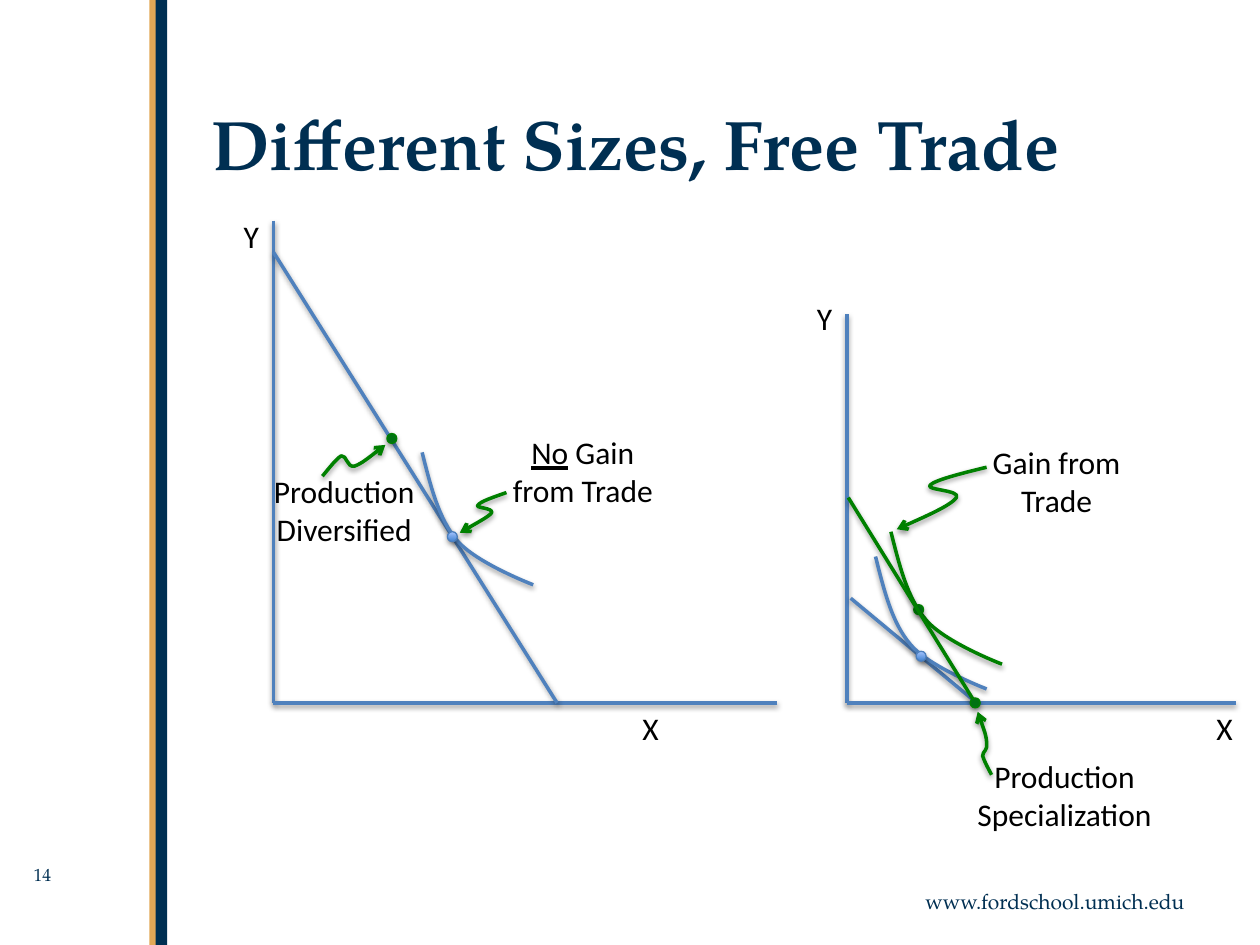
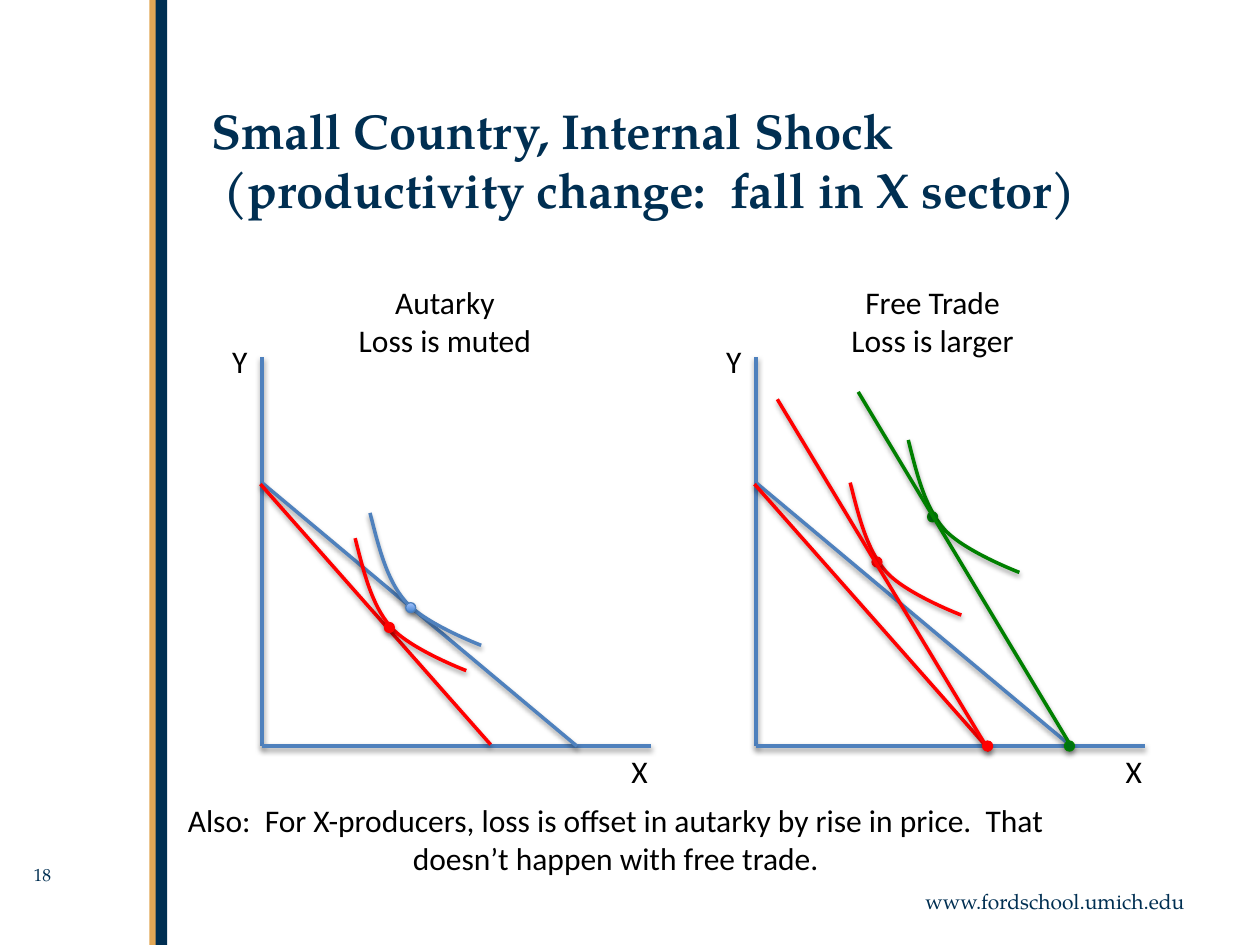
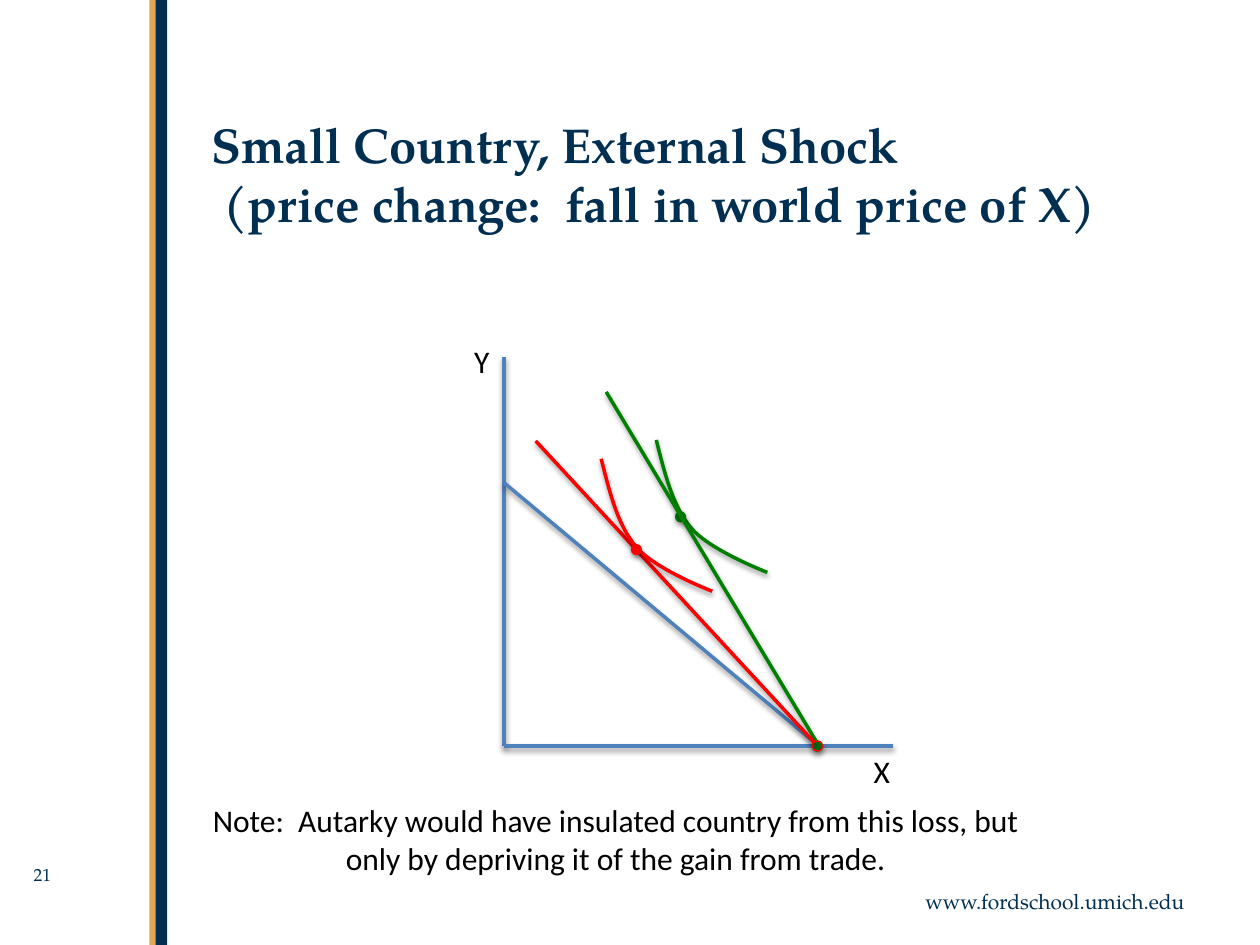
import pptx
import pptx.dml.color
import pptx.enum.shapes
import pptx.enum.text
import pptx.oxml
import pptx.oxml.ns
import pptx.util
from lxml import etree

Cm, Pt = pptx.util.Cm, pptx.util.Pt
RGBColor = pptx.dml.color.RGBColor
ALIGN = pptx.enum.text.PP_ALIGN
SHAPE = pptx.enum.shapes.MSO_SHAPE
qn = pptx.oxml.ns.qn

NAVY = RGBColor(0x00, 0x2F, 0x52)
GOLD = RGBColor(0xE3, 0xA8, 0x56)
BLACK = RGBColor(0x00, 0x00, 0x00)
BLUE = RGBColor(0x4F, 0x81, 0xBD)
GREEN = RGBColor(0x00, 0x80, 0x00)
RED = RGBColor(0xFF, 0x00, 0x00)
DOT_EDGE_BLUE = RGBColor(0x4B, 0x7E, 0xBC)
DOT_DARK_BLUE = RGBColor(0x3F, 0x80, 0xCE)
DOT_LIGHT_BLUE = RGBColor(0xA4, 0xC4, 0xFF)
DOT_GREEN = RGBColor(0x00, 0x72, 0x12)

SERIF = {"name": "TeX Gyre Pagella", "color": NAVY}
TITLE = {**SERIF, "size": Pt(40), "bold": True}
LONG_TITLE = {**TITLE, "size": Pt(28)}
FOOTER = {**SERIF, "size": Pt(12)}
NUMBER = {**SERIF, "size": Pt(10)}
LABEL = {"name": "Calibri", "color": BLACK, "size": Pt(18)}
UNDERLINED = {**LABEL, "underline": True}

# Shared geometry, in centimetres
SLIDE_SIZE = (25.4, 19.05)
BANDS = [(3.12, 0.25, NAVY), (3.01, 0.13, GOLD)]  # left, width, colour
TITLE_SIZE = (20.12, 3.12)
FOOTER_BOX = (17.78, 17.78, 6.35, 0.76)
NUMBER_BOX = (0.43, 17.3, 2.34, 0.86)
NOTE_BOX = (3.51, 16.03, 17.81)
AXIS_LETTER = (1.07, 1.02)
LABEL_HEIGHT = 1.8
DOT = 0.2
INDIFFERENCE = [(0, 0), (0.17, 0.67), (0.33, 1.34), (0.71, 1.78),
                (1.09, 2.23), (2.24, 2.67), (2.24, 2.67)]

# Marks are placed as (right, up) from the origin of their graph
FRONTIER = ("line", BLUE, (6.35, 0), (0, 5.31))
SHRUNK_FRONTIER = ("line", RED, (4.61, 0.03), (-0.03, 5.28))
GAIN_FROM_TRADE = [
    ("curve", GREEN, (3.07, 6.17)),
    ("dot", GREEN, (3.56, 4.62)),
    ("line", GREEN, (6.32, 0.05), (2.06, 7.14)),
    ("dot", GREEN, (6.32, 0)),
]
SQUARE = {"size": (7.84, 7.84), "x_back": 0.64, "y_up": 0.42}

SLIDES = [
    {
        "number": "14",
        "title": ["Different Sizes, Free Trade"], "style": TITLE, "title_top": 1.91,
        "graphs": [
            {"origin": (5.51, 14.17), "size": (10.16, 9.72), "x_back": 2.97, "y_up": 0.2,
             "marks": [
                 ("line", BLUE, (5.72, 0), (0, 9.09)),
                 ("curve", BLUE, (3, 5.05)),
                 ("dot", BLUE, (3.61, 3.35)),
                 ("dot", GREEN, (2.39, 5.33))]},
            {**SQUARE, "origin": (17.07, 14.17),
             "marks": [
                 ("line", BLUE, (2.62, 0), (0.08, 2.11)),
                 ("curve", BLUE, (0.58, 2.95)),
                 ("curve", GREEN, (0.89, 3.45)),
                 ("dot", BLUE, (1.5, 0.94)),
                 ("dot", GREEN, (1.45, 1.88)),
                 ("line", GREEN, (2.59, 0), (0.03, 4.14)),
                 ("dot", GREEN, (2.59, 0))]},
        ],
        "labels": [
            ((19.02, 15.14, 4.88), [[("Production Specialization", LABEL)]]),
            ((4.5, 9.4, 4.88), [[("Production Diversified", LABEL)]]),
            ((9.78, 8.61, 3.94), [[("No", UNDERLINED), (" Gain from Trade", LABEL)]]),
            ((19.66, 8.81, 3.28), [[("Gain from Trade", LABEL)]]),
        ],
        "arrows": [
            [(6.5, 9.6), (6.65, 9.42), (6.78, 9.25), (6.88, 9.19), (6.99, 9.17),
             (6.99, 9.42), (7.14, 9.4), (7.29, 9.35), (7.77, 8.97)],
            [(19.99, 15.62), (19.91, 15.47), (19.84, 15.34), (19.81, 15.24), (19.81, 15.14),
             (19.91, 15.14), (19.89, 14.99), (19.89, 14.83), (19.71, 14.35)],
            [(19.89, 9.42), (19.35, 9.55), (18.85, 9.68), (18.75, 9.78), (18.64, 9.88),
             (19.38, 9.88), (19.28, 10.03), (19.18, 10.19), (18.08, 10.67)],
            [(10.21, 9.93), (9.93, 10.03), (9.68, 10.11), (9.63, 10.19), (9.58, 10.24),
             (9.96, 10.24), (9.91, 10.34), (9.86, 10.41), (9.27, 10.74)],
        ],
    },
    {
        "number": "18",
        "title": ["Small Country, Internal Shock", " (productivity change:  fall in X sector)"],
        "style": LONG_TITLE, "title_top": 1.91,
        "graphs": [
            {**SQUARE, "origin": (5.28, 15.04),
             "marks": [
                 FRONTIER,
                 ("curve", BLUE, (2.18, 4.7)),
                 ("dot", BLUE, (3, 2.79)),
                 SHRUNK_FRONTIER,
                 ("curve", RED, (1.88, 4.19)),
                 ("dot", RED, (2.57, 2.39))]},
            {**SQUARE, "origin": (15.24, 15.04),
             "marks": [
                 FRONTIER,
                 *GAIN_FROM_TRADE,
                 SHRUNK_FRONTIER,
                 ("curve", RED, (1.9, 5.31)),
                 ("dot", RED, (2.44, 3.71)),
                 ("line", RED, (4.7, -0.1), (0.43, 6.99)),
                 ("dot", RED, (4.67, 0))]},
        ],
        "labels": [
            ((6.53, 5.59, 4.88), [[("Autarky", LABEL)], [("Loss is muted", LABEL)]]),
            ((16.36, 5.59, 4.88), [[("Free Trade", LABEL)], [("Loss is larger", LABEL)]]),
            (NOTE_BOX, [[("Also:  For X-producers, loss is offset in autarky by rise in price.  "
                          "That doesn’t happen with free trade.", LABEL)]]),
        ],
        "arrows": [],
    },
    {
        "number": "21",
        "title": ["Small Country, External Shock", " (price change:  fall in world price of X)"],
        "style": LONG_TITLE, "title_top": 2.18,
        "graphs": [
            {**SQUARE, "origin": (10.16, 15.04),
             "marks": [
                 FRONTIER,
                 *GAIN_FROM_TRADE,
                 ("line", RED, (6.25, 0.08), (0.64, 6.15)),
                 ("curve", RED, (1.96, 5.79)),
                 ("dot", RED, (2.67, 3.96)),
                 ("ring", RED, (6.32, 0))]},
        ],
        "labels": [
            (NOTE_BOX, [[("Note:  Autarky would have insulated country from this loss, "
                          "but only by depriving it of the gain from trade.", LABEL)]]),
        ],
        "arrows": [],
    },
]


def add_text(page, place, paragraphs, align=ALIGN.LEFT):
    """Each paragraph is a list of (text, format) spans; None is a line break."""
    box = page.shapes.add_textbox(*map(Cm, place))
    box.text_frame.word_wrap = True
    for index, spans in enumerate(paragraphs):
        para = box.text_frame.paragraphs[0] if index == 0 else box.text_frame.add_paragraph()
        para.alignment = align
        for part in spans:
            if part is None:
                para.add_line_break()
                continue
            span = para.add_run()
            span.text = part[0]
            for key, value in part[1].items():
                if key == "color":
                    span.font.color.rgb = value
                else:
                    setattr(span.font, key, value)


def add_shadow(shape, distance=1.6, opacity=38):
    props = shape._element.spPr
    effects = props.find(qn("a:effectLst"))
    if effects is None:
        effects = etree.SubElement(props, qn("a:effectLst"))
    shadow = etree.SubElement(effects, qn("a:outerShdw"), blurRad=str(Pt(3.1)),
                              dist=str(Pt(distance)), dir="5400000", rotWithShape="0")
    black = etree.SubElement(shadow, qn("a:srgbClr"), val="000000")
    etree.SubElement(black, qn("a:alpha"), val=str(opacity * 1000))


def set_line(shape, colour, width=2):
    shape.line.color.rgb = colour
    shape.line.width = Pt(width)


def add_line(page, colour, start, end):
    line = page.shapes.add_connector(pptx.enum.shapes.MSO_CONNECTOR.STRAIGHT,
                                     *map(Cm, (*start, *end)))
    set_line(line, colour)
    add_shadow(line)


def add_bezier(page, colour, points):
    """Draw a start point followed by groups of three cubic control points."""
    start, *rest = [(Cm(x), Cm(y)) for x, y in points]
    builder = page.shapes.build_freeform(*start)
    builder.add_line_segments(rest, close=False)
    curve = builder.convert_to_shape()
    outline = curve._element.spPr.find(".//" + qn("a:path"))
    segments = outline.findall(qn("a:lnTo"))
    for first in range(0, len(segments), 3):
        cubic = etree.SubElement(outline, qn("a:cubicBezTo"))
        for segment in segments[first:first + 3]:
            cubic.append(segment[0])
            outline.remove(segment)
    curve.fill.background()
    set_line(curve, colour)
    curve.shadow.inherit = False
    add_shadow(curve)
    return curve


def add_curve(page, colour, start):
    add_bezier(page, colour, [(start[0] + x, start[1] + y) for x, y in INDIFFERENCE])


def add_arrow(page, points):
    arrow = add_bezier(page, GREEN, points + points[-1:])
    etree.SubElement(arrow.line._get_or_add_ln(), qn("a:tailEnd"), type="arrow")


def add_ring(page, colour, centre):
    corner = [Cm(value - DOT / 2) for value in centre]
    ring = page.shapes.add_shape(SHAPE.OVAL, *corner, Cm(DOT), Cm(DOT))
    ring.fill.background()
    set_line(ring, DOT_EDGE_BLUE if colour == BLUE else colour, 0.75)
    ring.shadow.inherit = False
    add_shadow(ring, 1.8, 35)
    return ring


def add_dot(page, colour, centre):
    fill = add_ring(page, colour, centre).fill
    if colour == BLUE:
        fill.gradient()
        fill.gradient_angle = 90
        for stop, shade in zip(fill.gradient_stops, (DOT_DARK_BLUE, DOT_LIGHT_BLUE)):
            stop.color.rgb = shade
    else:
        fill.solid()
        fill.fore_color.rgb = DOT_GREEN if colour == GREEN else colour


DRAW = {"line": add_line, "curve": add_curve, "dot": add_dot, "ring": add_ring}


def add_graph(page, graph):
    left, base = graph["origin"]
    right, top = left + graph["size"][0], base - graph["size"][1]
    # Axes and their letters
    for end in ((left, top), (right, base)):
        add_line(page, BLUE, end, (left, base))
    add_text(page, (right - graph["x_back"], base, *AXIS_LETTER), [[("X", LABEL)]])
    add_text(page, (left - 0.85, top - graph["y_up"], *AXIS_LETTER), [[("Y", LABEL)]])
    # Lines, indifference curves and points
    for kind, colour, *points in graph["marks"]:
        DRAW[kind](page, colour, *[(left + x, base - y) for x, y in points])


def add_frame(page, content):
    for left, width, colour in BANDS:
        band = page.shapes.add_shape(SHAPE.RECTANGLE, Cm(left), 0, Cm(width), Cm(SLIDE_SIZE[1]))
        band.fill.solid()
        band.fill.fore_color.rgb = colour
        band.line.fill.background()
        band.shadow.inherit = False
    add_text(page, FOOTER_BOX, [[("www.fordschool.umich.edu", FOOTER)]], ALIGN.RIGHT)
    add_text(page, NUMBER_BOX, [[(content["number"], NUMBER)]])
    spans = []
    for line in content["title"]:
        spans += [None] * bool(spans) + [(line, content["style"])]
    add_text(page, (4.01, content["title_top"], *TITLE_SIZE), [spans])


def main():
    deck = pptx.Presentation()
    deck.slide_width, deck.slide_height = map(Cm, SLIDE_SIZE)
    for content in SLIDES:
        page = deck.slides.add_slide(deck.slide_layouts[6])
        add_frame(page, content)
        for graph in content["graphs"]:
            add_graph(page, graph)
        for place, paragraphs in content["labels"]:
            add_text(page, (*place, LABEL_HEIGHT), paragraphs, ALIGN.CENTER)
        for points in content["arrows"]:
            add_arrow(page, points)
    deck.save("out.pptx")


if __name__ == "__main__":
    main()
